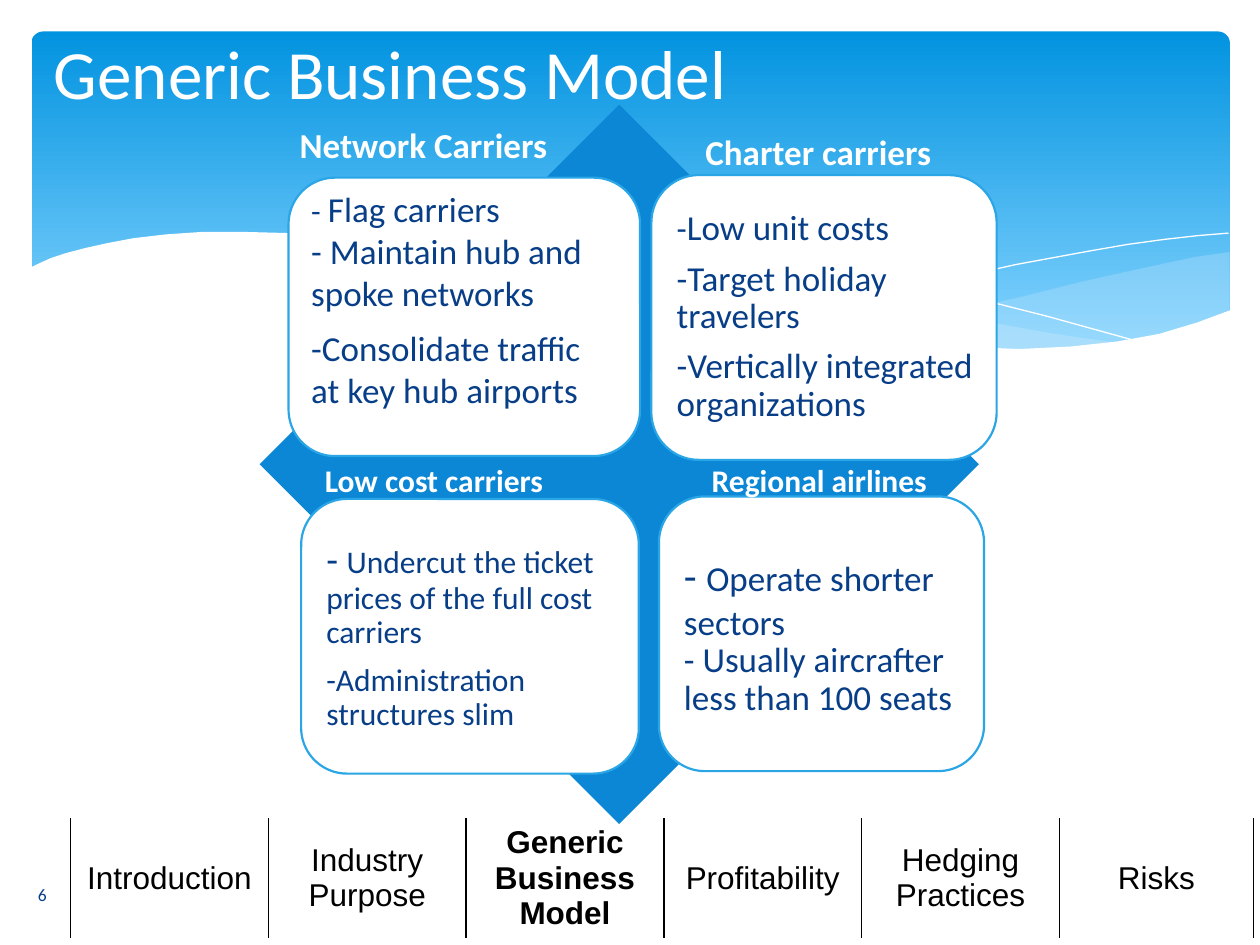
from dataclasses import dataclass
from typing import NamedTuple, Optional

from lxml.etree import SubElement
from pptx import Presentation
from pptx.dml.color import RGBColor
from pptx.enum.shapes import MSO_SHAPE
from pptx.enum.text import MSO_ANCHOR, PP_ALIGN
from pptx.oxml import parse_xml
from pptx.oxml.ns import nsdecls, qn
from pptx.util import Inches, Pt


@dataclass(frozen=True)
class Theme:
    white: str = "FFFFFF"
    black: str = "000000"
    navy: str = "073E87"
    diamond: str = "0B87D6"
    card_line: str = "2AA5E5"
    header_top: str = "0293E0"
    header_bottom: str = "81D2FE"
    wave: str = "C6E7FC"
    font: str = "Calibri"
    agenda_font: str = "Arial"
    title_size: float = 39.5
    large: float = 20
    medium: float = 18
    small: float = 10


THEME = Theme()


class Box(NamedTuple):
    left: float
    top: float
    width: float
    height: float

    def lengths(self):
        return [Inches(value) for value in self]


class Line(NamedTuple):
    text: str
    lead: str = ""
    lead_size: Optional[float] = None
    spacing: Optional[float] = None
    before: float = 0
    after: float = 0


class Card(NamedTuple):
    heading: str
    heading_size: float
    heading_box: Box
    box: Box
    text_box: Box
    inset: float
    size: float
    lines: list
    anchor: MSO_ANCHOR = MSO_ANCHOR.MIDDLE
    inset_top: Optional[float] = None


def rgb(color: str) -> RGBColor:
    return RGBColor.from_string(color)


def write_text(paragraph, text: str, *, size: float, color: str, font: str = THEME.font,
               bold: bool = False, align=PP_ALIGN.LEFT) -> None:
    paragraph.alignment = align
    run = paragraph.add_run()
    run.text = text
    run.font.size, run.font.name, run.font.bold = Pt(size), font, bold
    run.font.color.rgb = rgb(color)


def add_text_box(slide, box: Box, anchor=MSO_ANCHOR.TOP, insets=(0.1, 0.05, 0.1, 0.05)):
    frame = slide.shapes.add_textbox(*box.lengths()).text_frame
    frame.word_wrap = True
    frame.vertical_anchor = anchor
    (frame.margin_left, frame.margin_top,
     frame.margin_right, frame.margin_bottom) = map(Inches, insets)
    return frame


def style_shape(shape, fill: Optional[str] = None, line: Optional[str] = None,
                width: float = 1.25, opacity: Optional[int] = None) -> None:
    shape.shadow.inherit = False
    if fill:
        shape.fill.solid()
        shape.fill.fore_color.rgb = rgb(fill)
        if opacity is not None:
            color = shape._element.spPr.find(".//" + qn("a:srgbClr"))
            SubElement(color, qn("a:alpha")).set("val", str(opacity * 1000))
    else:
        shape.fill.background()
    if line:
        shape.line.color.rgb = rgb(line)
        shape.line.width = Pt(width)
    else:
        shape.line.fill.background()


def add_outline(slide, points: list, closed: bool = True, **style) -> None:
    corners = [(Inches(x), Inches(y)) for x, y in points]
    builder = slide.shapes.build_freeform(*corners[0], scale=1.0)
    builder.add_line_segments(corners[1:], close=closed)
    style_shape(builder.convert_to_shape(), **style)


def add_header(slide) -> None:
    header = slide.shapes.add_shape(MSO_SHAPE.ROUNDED_RECTANGLE, *Box(0.25, 0.25, 9.51, 2.7).lengths())
    header.adjustments[0] = 0.034
    style_shape(header)
    header.fill.gradient()
    header.fill.gradient_angle = 270
    for stop, color, position in zip(header.fill.gradient_stops,
                                     (THEME.header_top, THEME.header_bottom), (0, 0.9)):
        stop.color.rgb, stop.position = rgb(color), position

    # Translucent waves
    add_outline(slide, [
        (9.76, 2), (9.48, 2.04), (9.06, 2.13), (8.61, 2.23), (8.05, 2.37), (7.53, 2.48),
        (7.06, 2.57), (6.61, 2.65), (6.91, 2.69), (7.32, 2.74), (7.69, 2.77), (8.03, 2.78),
        (8.44, 2.77), (8.81, 2.73), (9.13, 2.67), (9.42, 2.59), (9.76, 2.47),
    ], fill=THEME.wave, opacity=29)
    add_outline(slide, [
        (8.93, 2.73), (8.37, 2.65), (7.75, 2.54), (7.06, 2.4), (6.29, 2.22), (5.84, 2.11),
        (5.41, 2.03), (5.02, 1.96), (4.65, 1.91), (4.2, 1.87), (3.8, 1.85), (3.44, 1.86),
        (3.13, 1.88), (2.86, 1.91), (3.23, 1.96), (3.62, 2.03), (4.04, 2.11), (4.49, 2.22),
        (5.3, 2.4), (6.01, 2.55), (6.5, 2.64), (6.95, 2.7), (7.36, 2.75), (7.73, 2.77),
        (8.07, 2.78), (8.48, 2.77), (8.93, 2.73),
    ], fill=THEME.wave, opacity=40)

    # Thin white curves
    for curve in (
        [(3.09, 1.95), (3.28, 1.92), (3.63, 1.89), (4.01, 1.87), (4.5, 1.88), (4.89, 1.9),
         (5.33, 1.94), (5.82, 2), (6.36, 2.08), (6.95, 2.19), (7.6, 2.33), (8.31, 2.51), (9.07, 2.72)],
        [(6.13, 2.57), (6.53, 2.46), (6.95, 2.35), (7.48, 2.23), (8.06, 2.1), (8.66, 1.99),
         (8.95, 1.94), (9.24, 1.9), (9.51, 1.87), (9.75, 1.85)],
    ):
        add_outline(slide, curve, closed=False, line=THEME.white, width=0.75)

    # White lower edge
    add_outline(slide, [
        (9.77, 2.46), (9.5, 2.56), (9.2, 2.65), (8.87, 2.71), (8.5, 2.75), (8.09, 2.77),
        (7.61, 2.75), (7.08, 2.7), (6.68, 2.65), (6.26, 2.58), (5.79, 2.5), (5.29, 2.39),
        (4.75, 2.27), (4.18, 2.13), (3.65, 2.02), (3.16, 1.94), (2.71, 1.88), (2.3, 1.85),
        (1.93, 1.84), (1.61, 1.84), (1.32, 1.86), (1.06, 1.89), (0.85, 1.93), (0.67, 1.97),
        (0.52, 2.01), (0.4, 2.05), (0.29, 2.1), (0.23, 2.13), (0.23, 3.29), (9.77, 3.29),
    ], fill=THEME.white)


def add_agenda(slide, topics: list, current: str) -> None:
    table = slide.shapes.add_table(1, len(topics), *Box(0.56, 6.5, 9.37, 0.94).lengths()).table
    table.first_row = table.horz_banding = False
    for index, topic in enumerate(topics):
        table.columns[index].width = Inches(1.54 if index == len(topics) - 1 else 1.57)
        cell = table.cell(0, index)
        cell.vertical_anchor = MSO_ANCHOR.MIDDLE
        cell.margin_left = cell.margin_right = Inches(0.07)
        cell.margin_top = cell.margin_bottom = Inches(0.05)
        properties = cell._tc.get_or_add_tcPr()
        for side in ("lnL", "lnR"):
            properties.append(parse_xml(
                f'<a:{side} {nsdecls("a")} w="12700"><a:solidFill>'
                f'<a:srgbClr val="{THEME.black}"/></a:solidFill></a:{side}>'))
        cell.fill.solid()
        cell.fill.fore_color.rgb = rgb(THEME.white)
        write_text(cell.text_frame.paragraphs[0], topic, size=THEME.medium, color=THEME.black,
                   font=THEME.agenda_font, bold=topic == current, align=PP_ALIGN.CENTER)


def add_card(slide, card: Card) -> None:
    shape = slide.shapes.add_shape(MSO_SHAPE.ROUNDED_RECTANGLE, *card.box.lengths())
    shape.adjustments[0] = 0.167
    style_shape(shape, fill=THEME.white, line=THEME.card_line)
    top = card.inset if card.inset_top is None else card.inset_top
    frame = add_text_box(slide, card.text_box, card.anchor, (card.inset, top, card.inset, card.inset))
    for index, line in enumerate(card.lines):
        paragraph = frame.add_paragraph() if index else frame.paragraphs[0]
        paragraph.line_spacing = line.spacing
        paragraph.space_before, paragraph.space_after = Pt(line.before), Pt(line.after)
        if line.lead:
            write_text(paragraph, line.lead, size=line.lead_size, color=THEME.navy)
        write_text(paragraph, line.text, size=card.size, color=THEME.navy)


CARDS = [
    Card("Network Carriers", THEME.large, Box(2.28, 0.93, 2.58, 0.44), Box(2.29, 1.41, 2.79, 2.21),
         Box(2.4, 1.49, 2.53, 2), 0.07, THEME.large,
         [Line("Flag carriers", "- ", 18), Line("- Maintain hub and spoke networks"),
          Line("-Consolidate traffic at key hub airports", before=7)], MSO_ANCHOR.TOP, 0),
    Card("Charter carriers", THEME.large, Box(5.5, 0.99, 2.09, 0.44), Box(5.17, 1.39, 2.74, 2.26),
         Box(5.29, 1.5, 2.52, 2.04), 0.08, THEME.large,
         [Line("Low unit costs", "-", 19, 0.9), Line("-Target holiday travelers", spacing=0.9, before=7),
          Line("-Vertically integrated organizations", spacing=0.9, before=7, after=7)]),
    Card("Low cost carriers", THEME.medium, Box(2.48, 3.61, 2.04, 0.4), Box(2.39, 3.96, 2.68, 2.18),
         Box(2.5, 4.07, 2.47, 1.96), 0.09, THEME.medium,
         [Line("Undercut the ticket prices of the full cost carriers", "- ", 22, 0.9),
          Line("-Administration structures slim", spacing=0.9, before=7.7, after=6.3)]),
    Card("Regional airlines", THEME.medium, Box(5.55, 3.61, 1.99, 0.4), Box(5.23, 3.94, 2.58, 2.18),
         Box(5.33, 4.05, 2.37, 1.96), 0.1, THEME.large,
         [Line("Operate shorter sectors", "- ", 24),
          Line("- Usually aircrafter less than 100 seats", spacing=0.9, after=7)]),
]


def main() -> None:
    presentation = Presentation()
    presentation.slide_width, presentation.slide_height = Inches(10), Inches(7.5)
    slide = presentation.slides.add_slide(presentation.slide_layouts[6])

    add_header(slide)
    add_agenda(slide, ["Introduction", "Industry Purpose", "Generic Business Model",
                       "Profitability", "Hedging Practices", "Risks"], "Generic Business Model")

    # Title and slide number
    title = add_text_box(slide, Box(0.33, 0.31, 8.62, 0.52), MSO_ANCHOR.MIDDLE)
    write_text(title.paragraphs[0], "Generic Business Model", size=THEME.title_size, color=THEME.white)
    number = add_text_box(slide, Box(0.14, 6.9, 0.39, 0.4), MSO_ANCHOR.MIDDLE)
    write_text(number.paragraphs[0], "6", size=THEME.small, color=THEME.navy, align=PP_ALIGN.CENTER)

    # Diamond with four cards and their headings
    diamond = slide.shapes.add_shape(MSO_SHAPE.DIAMOND, *Box(2.06, 0.83, 5.71, 5.71).lengths())
    style_shape(diamond, fill=THEME.diamond)
    for card in CARDS:
        add_card(slide, card)
    for card in CARDS:
        heading = add_text_box(slide, card.heading_box)
        write_text(heading.paragraphs[0], card.heading, size=card.heading_size,
                   color=THEME.white, bold=True)

    presentation.save("out.pptx")


if __name__ == "__main__":
    main()
